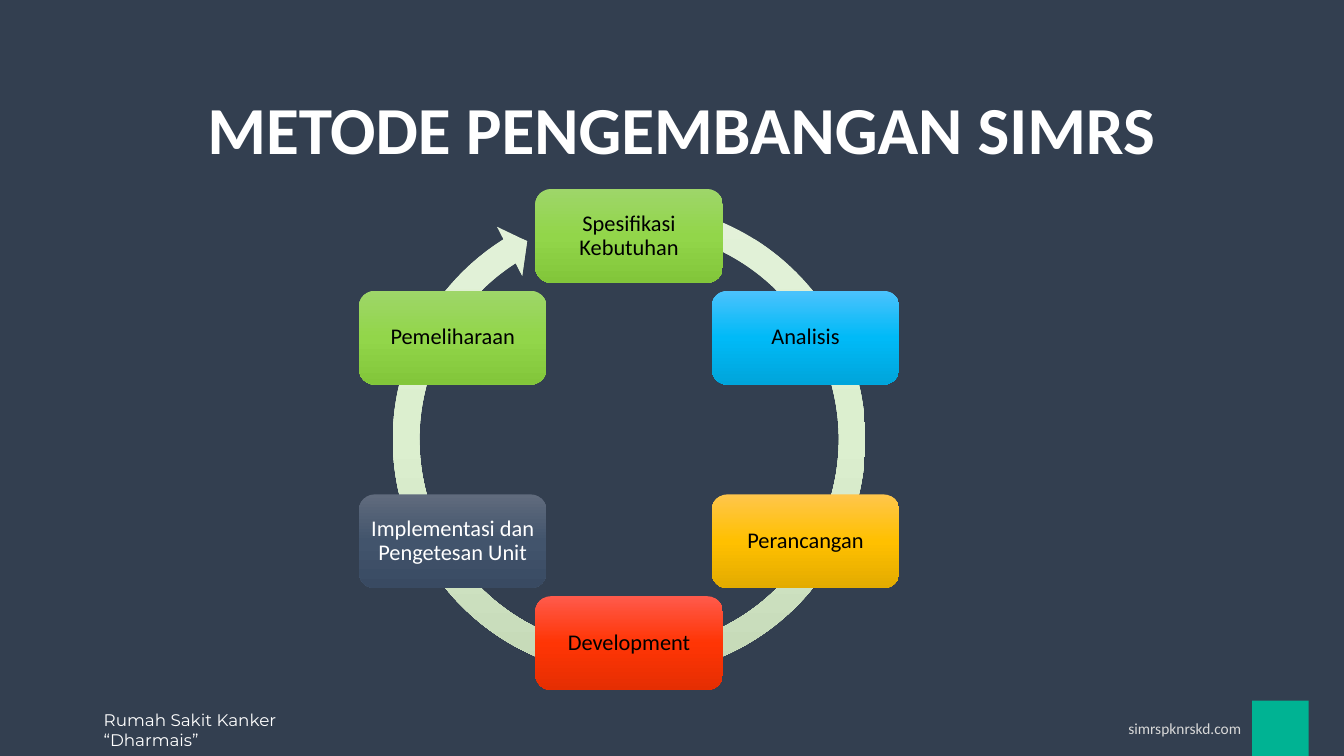
from copy import deepcopy
from dataclasses import dataclass
from math import cos, radians, sin

from pptx import Presentation
from pptx.dml.color import RGBColor
from pptx.enum.shapes import MSO_SHAPE as Preset
from pptx.enum.text import MSO_ANCHOR as Anchor, PP_ALIGN as Align
from pptx.shapes.autoshape import Shape
from pptx.util import Inches, Pt

BACKGROUND = RGBColor(0x33, 0x3F, 0x50)
TEAL = RGBColor(0x00, 0xB3, 0x93)
WHITE = RGBColor(0xFF, 0xFF, 0xFF)
BLACK = RGBColor(0x00, 0x00, 0x00)
LIGHT_GRAY = RGBColor(0xD9, 0xD9, 0xD9)

# Gradients from top to bottom
Gradient = tuple[RGBColor, RGBColor, RGBColor]
PALE_GREEN = (RGBColor(0xE3, 0xF1, 0xD9), RGBColor(0xDC, 0xEF, 0xCF), RGBColor(0xC3, 0xD7, 0xB5))
GREEN = (RGBColor(0x9E, 0xD6, 0x69), RGBColor(0x92, 0xD6, 0x4A), RGBColor(0x82, 0xC6, 0x3A))
BLUE = (RGBColor(0x4B, 0xC2, 0xFC), RGBColor(0x00, 0xBA, 0xF7), RGBColor(0x00, 0xA5, 0xDB))
AMBER = (RGBColor(0xFF, 0xC6, 0x4B), RGBColor(0xFF, 0xC0, 0x00), RGBColor(0xE3, 0xAB, 0x00))
RED = (RGBColor(0xFF, 0x5A, 0x4B), RGBColor(0xFF, 0x35, 0x05), RGBColor(0xE5, 0x2E, 0x02))
SLATE = (RGBColor(0x60, 0x6B, 0x7D), RGBColor(0x42, 0x54, 0x6C), RGBColor(0x39, 0x4A, 0x62))

# Cycle geometry, in inches
CENTER_X, CENTER_Y = 6.24, 4.36
RADIUS = 2.02
RING_SIZE = 4.97
STAGE_WIDTH, STAGE_HEIGHT = 1.86, 0.93


@dataclass(frozen=True)
class Stage:
    label: str
    gradient: Gradient
    color: RGBColor = BLACK


@dataclass(frozen=True)
class Caption:
    text: str
    left: float
    top: float
    width: float
    height: float
    align: Align
    line_spacing: float
    font: dict


STAGES = [
    Stage("Spesifikasi Kebutuhan", GREEN),
    Stage("Analisis", BLUE),
    Stage("Perancangan", AMBER),
    Stage("Development", RED),
    Stage("Implementasi dan Pengetesan Unit", SLATE, WHITE),
    Stage("Pemeliharaan", GREEN),
]

CAPTIONS = [
    Caption("simrspknrskd.com", 10.37, 7.11, 2.04, 0.23, Align.RIGHT, 0.9,
            {"name": "Calibri", "size": Pt(11), "color": LIGHT_GRAY}),
    Caption("Rumah Sakit Kanker “Dharmais”", 0.93, 6.99, 2.87, 0.3, Align.LEFT, 1.0,
            {"name": "Montserrat", "size": Pt(12), "color": WHITE}),
    Caption("METODE PENGEMBANGAN SIMRS", 1.91, 0.82, 9.7, 0.91, Align.CENTER, 1.0,
            {"name": "Calibri", "size": Pt(48), "color": WHITE, "bold": True}),
]


def write(shape: Shape, text: str, align: Align, line_spacing: float, font: dict) -> None:
    shape.text_frame.word_wrap = True
    paragraph = shape.text_frame.paragraphs[0]
    paragraph.alignment = align
    paragraph.line_spacing = line_spacing
    run = paragraph.add_run()
    run.text = text
    for attribute, value in font.items():
        if attribute == "color":
            run.font.color.rgb = value
        else:
            setattr(run.font, attribute, value)


def add_plain(shapes, preset: Preset, left: float, top: float, width: float, height: float) -> Shape:
    shape = shapes.add_shape(preset, Inches(left), Inches(top), Inches(width), Inches(height))
    shape.shadow.inherit = False
    shape.line.fill.background()
    return shape


def fill_gradient(shape: Shape, gradient: Gradient) -> None:
    shape.fill.gradient()
    shape.fill.gradient_angle = 270
    # A new gradient has two stops; a third goes between them
    first_stop = shape._element.spPr.find(".//{*}gs")
    first_stop.addnext(deepcopy(first_stop))
    for stop, position, color in zip(shape.fill.gradient_stops, (0, 0.5, 1), gradient):
        stop.position = position
        stop.color.rgb = color


def add_ring(shapes) -> None:
    ring = add_plain(shapes, Preset.CIRCULAR_ARROW, CENTER_X - RING_SIZE / 2,
                     CENTER_Y - RING_SIZE / 2, RING_SIZE, RING_SIZE)
    for index, value in enumerate((0.053, 3.126, 142.551, 171.113, 0.055)):
        ring.adjustments[index] = value
    fill_gradient(ring, PALE_GREEN)


def add_stage(shapes, stage: Stage, angle: float) -> None:
    left = CENTER_X + RADIUS * sin(angle) - STAGE_WIDTH / 2
    top = CENTER_Y - RADIUS * cos(angle) - STAGE_HEIGHT / 2
    box = add_plain(shapes, Preset.ROUNDED_RECTANGLE, left, top, STAGE_WIDTH, STAGE_HEIGHT)
    fill_gradient(box, stage.gradient)
    frame = box.text_frame
    frame.vertical_anchor = Anchor.MIDDLE
    for side in ("left", "top", "right", "bottom"):
        setattr(frame, f"margin_{side}", Inches(0.06))
    write(box, stage.label, Align.CENTER, 0.9,
          {"name": "Calibri", "size": Pt(16), "color": stage.color})


def add_caption(shapes, caption: Caption) -> None:
    box = shapes.add_textbox(Inches(caption.left), Inches(caption.top),
                             Inches(caption.width), Inches(caption.height))
    write(box, caption.text, caption.align, caption.line_spacing, caption.font)


def main() -> None:
    deck = Presentation()
    deck.slide_width, deck.slide_height = Inches(13.33), Inches(7.5)
    slide = deck.slides.add_slide(deck.slide_layouts[6])
    slide.background.fill.solid()
    slide.background.fill.fore_color.rgb = BACKGROUND

    # Footer accent
    accent = add_plain(slide.shapes, Preset.RECTANGLE, 12.42, 6.95, 0.56, 0.55)
    accent.fill.solid()
    accent.fill.fore_color.rgb = TEAL

    # Development cycle, clockwise from the top
    add_ring(slide.shapes)
    for index, stage in enumerate(STAGES):
        add_stage(slide.shapes, stage, radians(index * 360 / len(STAGES)))

    # Footer texts and title
    for caption in CAPTIONS:
        add_caption(slide.shapes, caption)

    deck.save("out.pptx")


if __name__ == "__main__":
    main()
